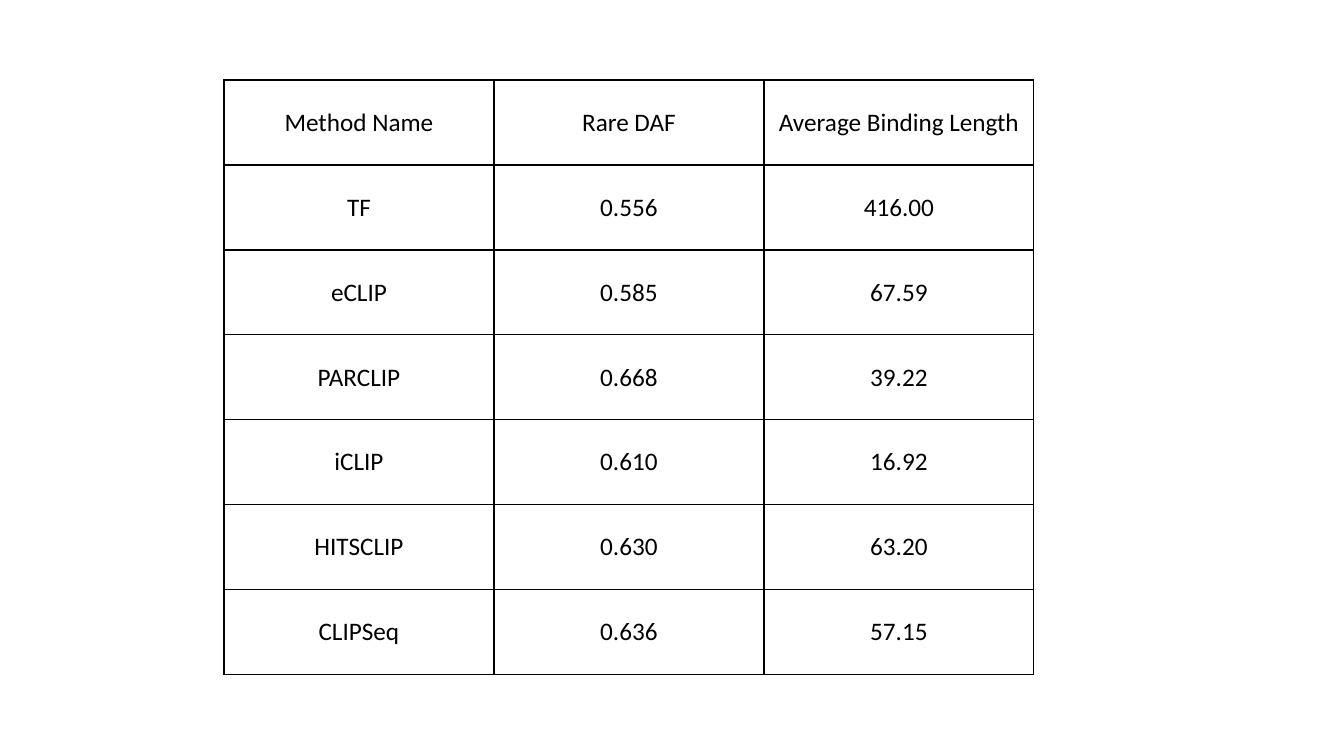
"""Build a slide comparing binding-site methods by rare DAF and binding length."""
import lxml.etree
import pptx
import pptx.dml.color
import pptx.enum.text
import pptx.oxml.ns
import pptx.util

BLACK = pptx.dml.color.RGBColor(0x00, 0x00, 0x00)
EMU_PER_PX = 914400 / 100.8

METHODS = [
    ("Method Name", "Rare DAF", "Average Binding Length"),
    ("TF", "0.556", "416.00"),
    ("eCLIP", "0.585", "67.59"),
    ("PARCLIP", "0.668", "39.22"),
    ("iCLIP", "0.610", "16.92"),
    ("HITSCLIP", "0.630", "63.20"),
    ("CLIPSeq", "0.636", "57.15"),
]


def px(length):
    """Turn whole pixels into EMU."""
    return pptx.util.Emu(round(length * EMU_PER_PX))


class SlideBuilder:
    """Hold the text and border style and draw on one slide."""

    font_name = "Calibri"
    font_size = pptx.util.Pt(18)
    border_width = pptx.util.Pt(1)
    ink = BLACK

    def __init__(self, slide):
        """Keep the slide to draw on."""
        self.slide = slide

    def table(self, left, top, column_width, row_height, rows):
        """Add a bordered table with equal columns and equal rows."""
        column_count = len(rows[0])
        grid = self.slide.shapes.add_table(
            len(rows), column_count, px(left), px(top),
            px(column_width * column_count), px(row_height * len(rows)),
        ).table
        grid.first_row = False
        grid.horz_banding = False
        for column in grid.columns:
            column.width = px(column_width)
        for row, values in zip(grid.rows, rows):
            row.height = px(row_height)
            for cell, value in zip(row.cells, values):
                self.cell(cell, value)

    def cell(self, cell, value):
        """Write a centred value into an unfilled, bordered cell."""
        cell.text = value
        cell.vertical_anchor = pptx.enum.text.MSO_ANCHOR.MIDDLE
        paragraph = cell.text_frame.paragraphs[0]
        paragraph.alignment = pptx.enum.text.PP_ALIGN.CENTER
        paragraph.font.name = self.font_name
        paragraph.font.size = self.font_size
        paragraph.font.color.rgb = self.ink
        self.borders(cell)
        cell.fill.background()

    def borders(self, cell):
        """Draw a solid line on all four sides of a cell."""
        qn = pptx.oxml.ns.qn
        properties = cell._tc.get_or_add_tcPr()
        for side in ("a:lnL", "a:lnR", "a:lnT", "a:lnB"):
            line = lxml.etree.SubElement(properties, qn(side), w=str(self.border_width))
            fill = lxml.etree.SubElement(line, qn("a:solidFill"))
            lxml.etree.SubElement(fill, qn("a:srgbClr"), val=str(self.ink))


def main():
    """Create the presentation and save it."""
    presentation = pptx.Presentation()
    presentation.slide_width = px(1344)
    presentation.slide_height = px(756)
    blank_layout = presentation.slide_layouts[6]
    builder = SlideBuilder(presentation.slides.add_slide(blank_layout))
    builder.table(224, 80, 270, 85, METHODS)
    presentation.save("out.pptx")


if __name__ == "__main__":
    main()
